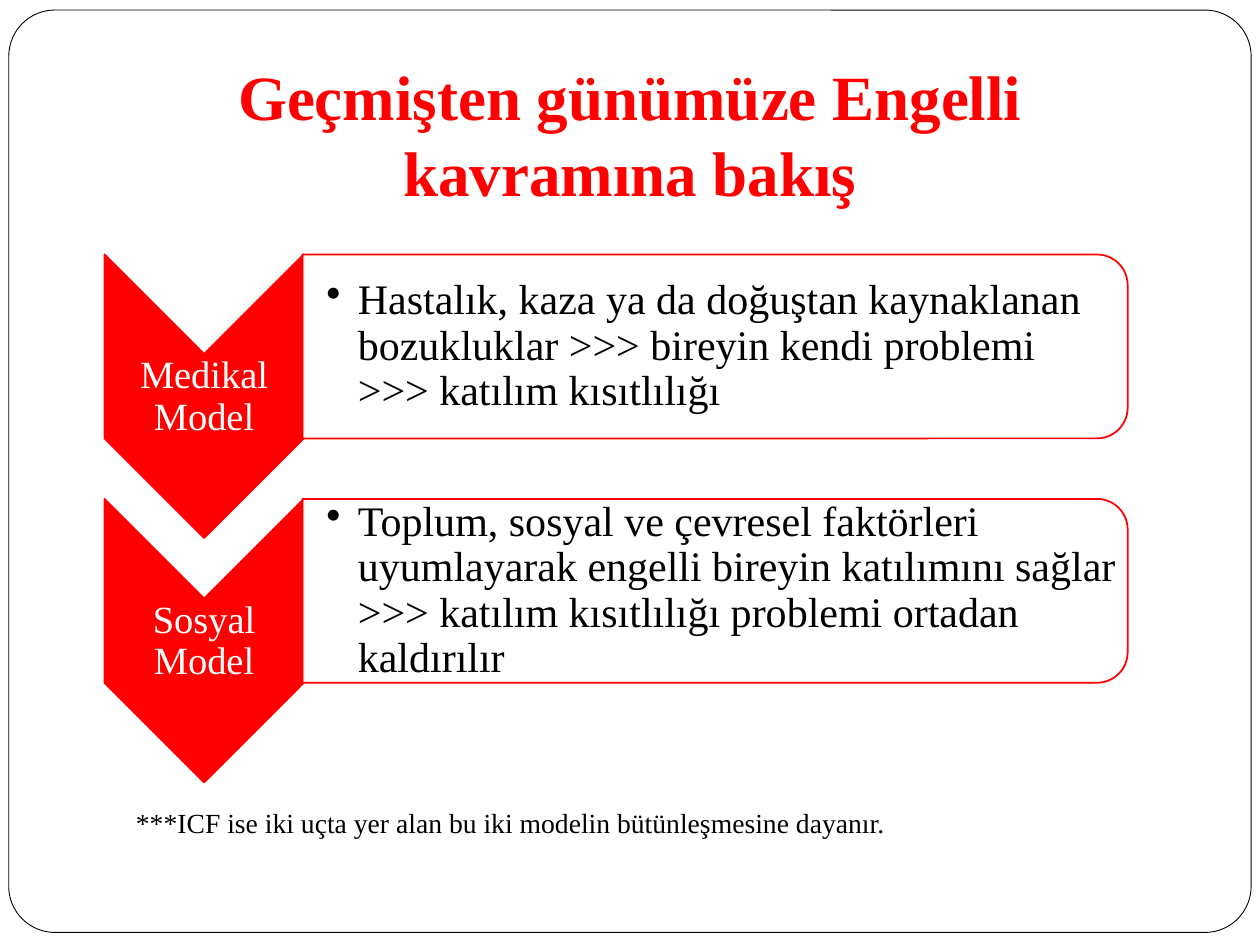
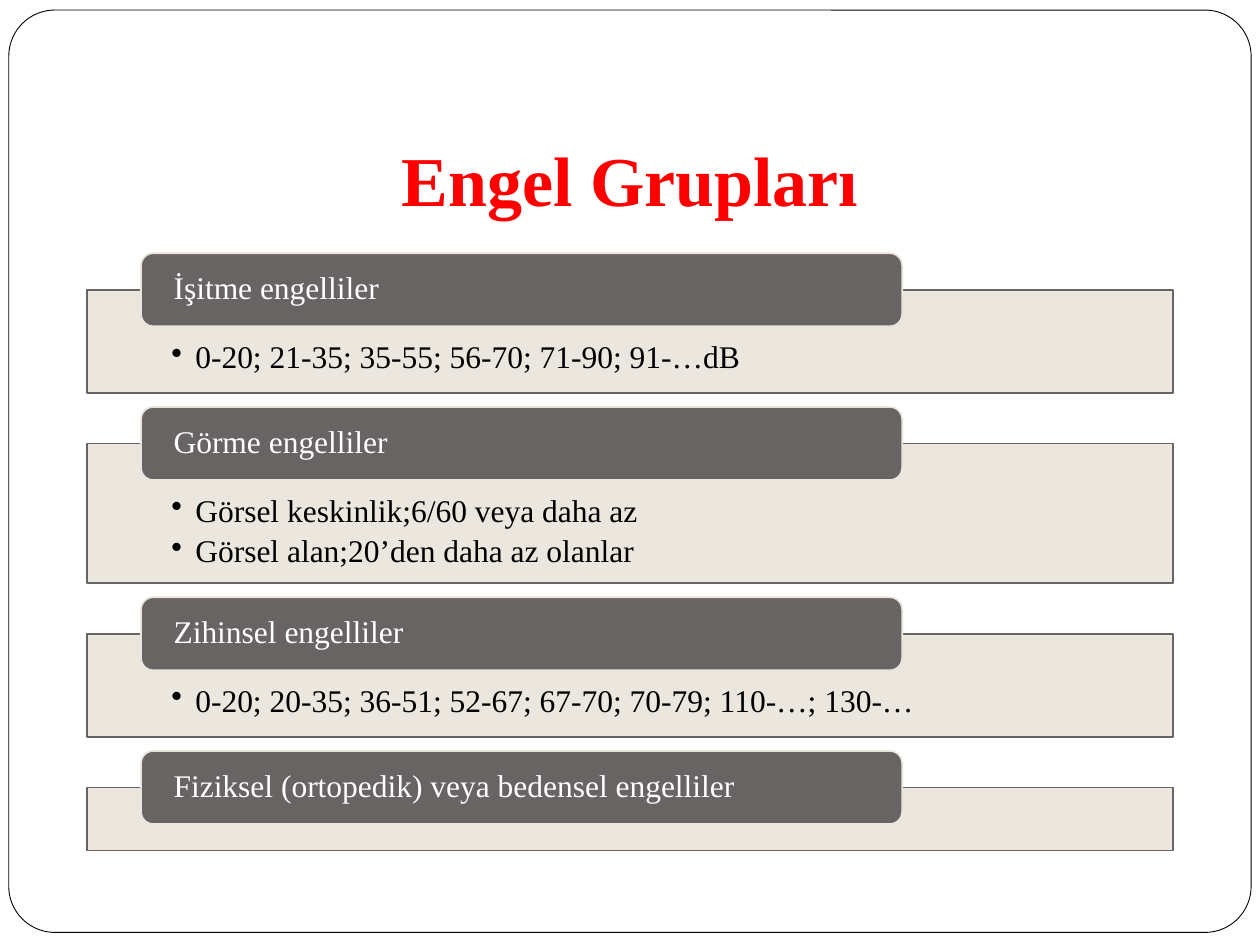
from dataclasses import dataclass

from lxml import etree
from pptx import Presentation
from pptx.dml.color import RGBColor
from pptx.enum.shapes import MSO_SHAPE
from pptx.enum.text import MSO_ANCHOR, PP_ALIGN
from pptx.oxml.ns import qn
from pptx.shapes.autoshape import Shape
from pptx.slide import Slide
from pptx.util import Inches, Pt

RED = RGBColor(0xFF, 0x00, 0x00)
WHITE = RGBColor(0xFF, 0xFF, 0xFF)
BLACK = RGBColor(0x00, 0x00, 0x00)
GRAY = RGBColor(0x69, 0x64, 0x64)
BEIGE = RGBColor(0xE9, 0xE5, 0xDC)

FONT = "Times New Roman"
LEFT, CENTER = PP_ALIGN.LEFT, PP_ALIGN.CENTER
TOP, MIDDLE, BOTTOM = MSO_ANCHOR.TOP, MSO_ANCHOR.MIDDLE, MSO_ANCHOR.BOTTOM
RECTANGLE = MSO_SHAPE.RECTANGLE
ROUNDED = MSO_SHAPE.ROUNDED_RECTANGLE
ROUND_TOP = MSO_SHAPE.ROUND_2_SAME_RECTANGLE
CHEVRON = MSO_SHAPE.CHEVRON


@dataclass(frozen=True)
class Area:
    left: float
    top: float
    width: float
    height: float

    def lengths(self) -> tuple[int, int, int, int]:
        return (Inches(self.left), Inches(self.top),
                Inches(self.width), Inches(self.height))

    def turned(self) -> "Area":
        shift = (self.width - self.height) / 2
        return Area(self.left + shift, self.top - shift, self.height, self.width)


@dataclass(frozen=True)
class TextStyle:
    size: float
    color: RGBColor
    insets: tuple[float, float, float, float] = (0.1, 0.05, 0.1, 0.05)
    align: PP_ALIGN = LEFT
    anchor: MSO_ANCHOR = TOP
    bold: bool = False
    wrap: bool = True
    spacing: float = 1.0
    after: float = 0
    indent: float = 0


@dataclass(frozen=True)
class Model:
    name: str
    description: str


@dataclass(frozen=True)
class Group:
    name: str
    details: tuple[str, ...]
    height: float


TITLE_INSETS = (0.1, 0.05, 0.1, 0.1)
LONG_TITLE = TextStyle(36, RED, TITLE_INSETS, CENTER, BOTTOM, bold=True)
SHORT_TITLE = TextStyle(40, RED, TITLE_INSETS, CENTER, BOTTOM, bold=True)
MODEL_NAME = TextStyle(22, WHITE, (0.02,) * 4, CENTER, MIDDLE, spacing=0.9)
MODEL_TEXT = TextStyle(24, BLACK, (0.19, 0.02, 0.02, 0.02), anchor=MIDDLE,
                       spacing=0.9, indent=0.25)
NOTE = TextStyle(15.8, BLACK, wrap=False, after=6)
GROUP_NAME = TextStyle(18, WHITE, (0.23, 0, 0.23, 0), anchor=MIDDLE, spacing=0.9)
GROUP_TEXT = TextStyle(18, BLACK, (0.67, 0.41, 0.67, 0.14), spacing=0.9,
                       after=3.6, indent=0.19)

MODELS = (
    Model("Medikal Model",
          "Hastalık, kaza ya da doğuştan kaynaklanan bozukluklar >>> "
          "bireyin kendi problemi >>> katılım kısıtlılığı"),
    Model("Sosyal Model",
          "Toplum, sosyal ve çevresel faktörleri uyumlayarak engelli bireyin "
          "katılımını sağlar >>> katılım kısıtlılığı problemi ortadan kaldırılır"),
)
MODEL_TOP, MODEL_STEP = 2.02, 1.94

GROUPS = (
    Group("İşitme engelliler", ("0-20; 21-35; 35-55; 56-70; 71-90; 91-…dB",), 0.82),
    Group("Görme engelliler", ("Görsel keskinlik;6/60 veya daha az",
                               "Görsel alan;20’den daha az olanlar"), 1.11),
    Group("Zihinsel engelliler",
          ("0-20; 20-35; 36-51; 52-67; 67-70; 70-79; 110-…; 130-…",), 0.82),
    Group("Fiziksel (ortopedik) veya bedensel engelliler", (), 0.5),
)
GROUP_TOP, GROUP_GAP, TAB_RISE = 2.3, 0.4, 0.29


def write(box: Shape, lines: tuple[str, ...], style: TextStyle) -> None:
    frame = box.text_frame
    frame.word_wrap = style.wrap
    frame.vertical_anchor = style.anchor
    (frame.margin_left, frame.margin_top,
     frame.margin_right, frame.margin_bottom) = map(Inches, style.insets)
    frame.text = "\n".join(lines)
    for para in frame.paragraphs:
        para.alignment = style.align
        para.line_spacing = style.spacing
        para.space_after = Pt(style.after)
        if style.indent:
            properties = para._p.get_or_add_pPr()
            properties.set("marL", str(Inches(style.indent)))
            properties.set("indent", str(-Inches(style.indent)))
            etree.SubElement(properties, qn("a:buChar"), char="•")
        for span in para.runs:
            span.font.name = FONT
            span.font.size = Pt(style.size)
            span.font.bold = style.bold
            span.font.color.rgb = style.color


def add_text(page: Slide, area: Area, text: str, style: TextStyle) -> None:
    write(page.shapes.add_textbox(*area.lengths()), (text,), style)


def add_figure(page: Slide, kind: MSO_SHAPE, area: Area, fill: RGBColor,
               line: RGBColor, weight: float = 1, opacity: int = 100) -> Shape:
    figure = page.shapes.add_shape(kind, *area.lengths())
    figure.shadow.inherit = False
    figure.fill.solid()
    figure.fill.fore_color.rgb = fill
    figure.line.color.rgb = line
    figure.line.width = Pt(weight)
    if opacity < 100:
        color = figure.fill._xPr.find(qn("a:solidFill"))[0]
        etree.SubElement(color, qn("a:alpha"), val=str(opacity * 1000))
    return figure


def add_page(deck: Presentation, title: str, area: Area, style: TextStyle) -> Slide:
    page = deck.slides.add_slide(deck.slide_layouts[6])
    border = add_figure(page, ROUNDED, Area(0.07, 0.08, 9.86, 7.32), WHITE, BLACK, 0.5)
    border.adjustments[0] = 0.05
    add_text(page, area, title, style)
    return page


def add_model(page: Slide, model: Model, top: float) -> None:
    arrow = add_figure(page, CHEVRON, Area(0.83, top, 1.58, 2.25).turned(), RED, RED)
    arrow.rotation = 90
    add_text(page, Area(0.83, top + 0.79, 1.58, 0.68), model.name, MODEL_NAME)
    panel = add_figure(page, ROUND_TOP, Area(2.4, top, 6.55, 1.46).turned(),
                       WHITE, RED, opacity=90)
    panel.rotation = 90
    add_text(page, Area(2.4, top + 0.07, 6.48, 1.32), model.description, MODEL_TEXT)


def add_group(page: Slide, group: Group, top: float) -> None:
    panel = add_figure(page, RECTANGLE, Area(0.69, top, 8.62, group.height),
                       BEIGE, GRAY, opacity=90)
    if group.details:
        write(panel, group.details, GROUP_TEXT)
    tab = add_figure(page, ROUNDED, Area(1.12, top - TAB_RISE, 6.04, 0.58), GRAY, BEIGE)
    write(tab, (group.name,), GROUP_NAME)


def add_models_page(deck: Presentation) -> None:
    page = add_page(deck, "Geçmişten günümüze Engelli kavramına bakış",
                    Area(0.69, 0.65, 8.62, 1.11), LONG_TITLE)
    for index, model in enumerate(MODELS):
        add_model(page, model, MODEL_TOP + index * MODEL_STEP)
    add_text(page, Area(0.98, 6.35, 6.21, 0.75),
             "***ICF ise iki uçta yer alan bu iki modelin bütünleşmesine dayanır.", NOTE)


def add_groups_page(deck: Presentation) -> None:
    page = add_page(deck, "Engel Grupları", Area(0.69, 0.4, 8.62, 1.45), SHORT_TITLE)
    top = GROUP_TOP
    for group in GROUPS:
        add_group(page, group, top)
        top += group.height + GROUP_GAP


def main() -> None:
    deck = Presentation()
    deck.slide_width, deck.slide_height = Inches(10), Inches(7.5)
    add_models_page(deck)
    add_groups_page(deck)
    deck.save("out.pptx")


if __name__ == "__main__":
    main()
